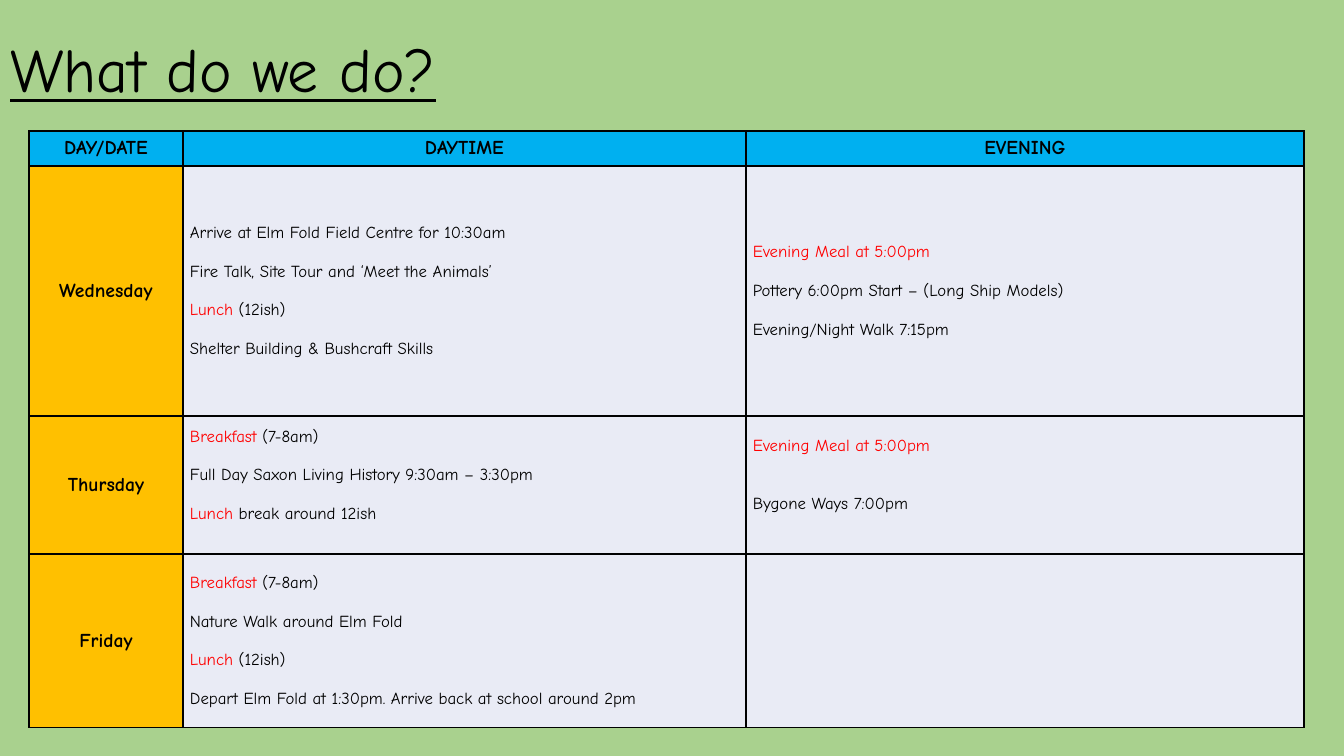
"""Build the timetable slide for a three-day school stay."""
from dataclasses import dataclass
from typing import NamedTuple

from lxml import etree
from pptx import Presentation
from pptx.dml.color import RGBColor
from pptx.enum.text import MSO_ANCHOR, MSO_AUTO_SIZE, PP_ALIGN
from pptx.oxml.ns import qn
from pptx.util import Emu, Pt

MIDDLE = MSO_ANCHOR.MIDDLE
LEFT, CENTER = PP_ALIGN.LEFT, PP_ALIGN.CENTER
NO_FIT = MSO_AUTO_SIZE.NONE
FONT = "Comic Neue"
COLORS = {
    "page": "A9D18E",
    "head": "00B0F0",
    "day": "FFC000",
    "plan": "E9EBF5",
    "ink": "000000",
    "meal": "FF0000",
}
WIDE, HIGH = 1344, 756
SCALE = 12192000 / WIDE
COLS = (154, 563, 558)
HEAD = 35
SIDES = ("a:lnL", "a:lnR", "a:lnT", "a:lnB")


class Part(NamedTuple):
    text: str
    color: str = "ink"


Line = tuple[Part, ...]


@dataclass(frozen=True)
class Plan:
    lines: tuple[Line, ...] = ()
    gap: float = 13.8
    foot: int = 0


@dataclass(frozen=True)
class Day:
    name: str
    high: int
    noon: Plan
    night: Plan


@dataclass(frozen=True)
class Look:
    fill: str
    size: int
    bold: bool
    align: PP_ALIGN


TITLE = Look("page", 44, False, LEFT)
TOP = Look("head", 14, True, CENTER)
SIDE = Look("day", 14, True, CENTER)
BODY = Look("plan", 12, False, LEFT)

SUPPER = (Part("Evening Meal at 5:00pm", "meal"),)
LUNCH = (Part("Lunch ", "meal"), Part("(12ish)"))
MORNING = (Part("Breakfast", "meal"), Part(" (7-8am)"))

DAYS = (
    Day("Wednesday", 250,
        Plan(((Part("Arrive at Elm Fold Field Centre for 10:30am"),),
              (Part("Fire Talk, Site Tour and ‘Meet the Animals’"),),
              LUNCH,
              (Part("Shelter Building & Bushcraft Skills"),))),
        Plan((SUPPER,
              (Part("Pottery 6:00pm Start – (Long Ship Models)"),),
              (Part("Evening/Night Walk 7:15pm"),)))),
    Day("Thursday", 138,
        Plan((MORNING,
              (Part("Full Day Saxon Living History 9:30am – 3:30pm"),),
              (Part("Lunch", "meal"), Part(" break around 12ish"))), foot=19),
        Plan((SUPPER, (Part("Bygone Ways 7:00pm"),)), gap=27.6, foot=19)),
    Day("Friday", 174,
        Plan((MORNING,
              (Part("Nature Walk around Elm Fold"),),
              LUNCH,
              (Part("Depart Elm Fold at 1:30pm. Arrive back at school around 2pm"),))),
        Plan()),
)


def px(count: int) -> Emu:
    """Turn pixels into EMU."""
    return Emu(round(count * SCALE))


def tint(name: str) -> RGBColor:
    """Look up a named colour."""
    return RGBColor.from_string(COLORS[name])


def write(frame, plan: Plan, look: Look) -> None:
    """Write the lines of a plan run by run."""
    for index, line in enumerate(plan.lines):
        para = frame.add_paragraph() if index else frame.paragraphs[0]
        para.alignment = look.align
        if index:
            para.space_before = Pt(plan.gap)
        for part in line:
            run = para.add_run()
            run.text = part.text
            run.font.name = FONT
            run.font.size = Pt(look.size)
            run.font.bold = look.bold
            run.font.color.rgb = tint(part.color)


def edge(cell) -> None:
    """Draw a one-point border around a cell."""
    props = cell._tc.get_or_add_tcPr()
    for side in SIDES:
        rule = etree.SubElement(props, qn(side), w=str(Pt(1)))
        fill = etree.SubElement(rule, qn("a:solidFill"))
        etree.SubElement(fill, qn("a:srgbClr"), val=COLORS["ink"])


def fill_cell(cell, plan: Plan, look: Look) -> None:
    """Format one cell and write its plan."""
    edge(cell)
    cell.fill.solid()
    cell.fill.fore_color.rgb = tint(look.fill)
    cell.vertical_anchor = MIDDLE
    cell.margin_left = cell.margin_right = px(7)
    cell.margin_top = px(0)
    cell.margin_bottom = px(plan.foot)
    write(cell.text_frame, plan, look)


def label(text: str) -> Plan:
    """Wrap a single label as a plan."""
    return Plan(((Part(text),),))


def add_title(slide) -> None:
    """Place and format the title."""
    title = slide.shapes.title
    title.left, title.top, title.width, title.height = map(px, (0, 0, 1159, 146))
    frame = title.text_frame
    frame.auto_size = NO_FIT
    frame.vertical_anchor = MIDDLE
    write(frame, label("What do we do?"), TITLE)
    para = frame.paragraphs[0]
    para.line_spacing = 0.9
    para.runs[0].font.underline = True


def add_days(slide) -> None:
    """Draw the timetable."""
    highs = (HEAD, *(day.high for day in DAYS))
    table = slide.shapes.add_table(
        len(highs), len(COLS), px(29), px(131), px(sum(COLS)), px(sum(highs))).table
    table.first_row = table.horz_banding = False
    for col, wide in zip(table.columns, COLS):
        col.width = px(wide)
    for row, high in zip(table.rows, highs):
        row.height = px(high)
    for col, text in enumerate(("DAY/DATE", "DAYTIME", "EVENING")):
        fill_cell(table.cell(0, col), label(text), TOP)
    for row, day in enumerate(DAYS, 1):
        fill_cell(table.cell(row, 0), label(day.name), SIDE)
        fill_cell(table.cell(row, 1), day.noon, BODY)
        fill_cell(table.cell(row, 2), day.night, BODY)


def main() -> None:
    """Build and save the deck."""
    deck = Presentation()
    deck.slide_width, deck.slide_height = px(WIDE), px(HIGH)
    slide = deck.slides.add_slide(deck.slide_layouts.get_by_name("Title Only"))
    slide.background.fill.solid()
    slide.background.fill.fore_color.rgb = tint("page")
    add_title(slide)
    add_days(slide)
    deck.save("out.pptx")


if __name__ == "__main__":
    main()
